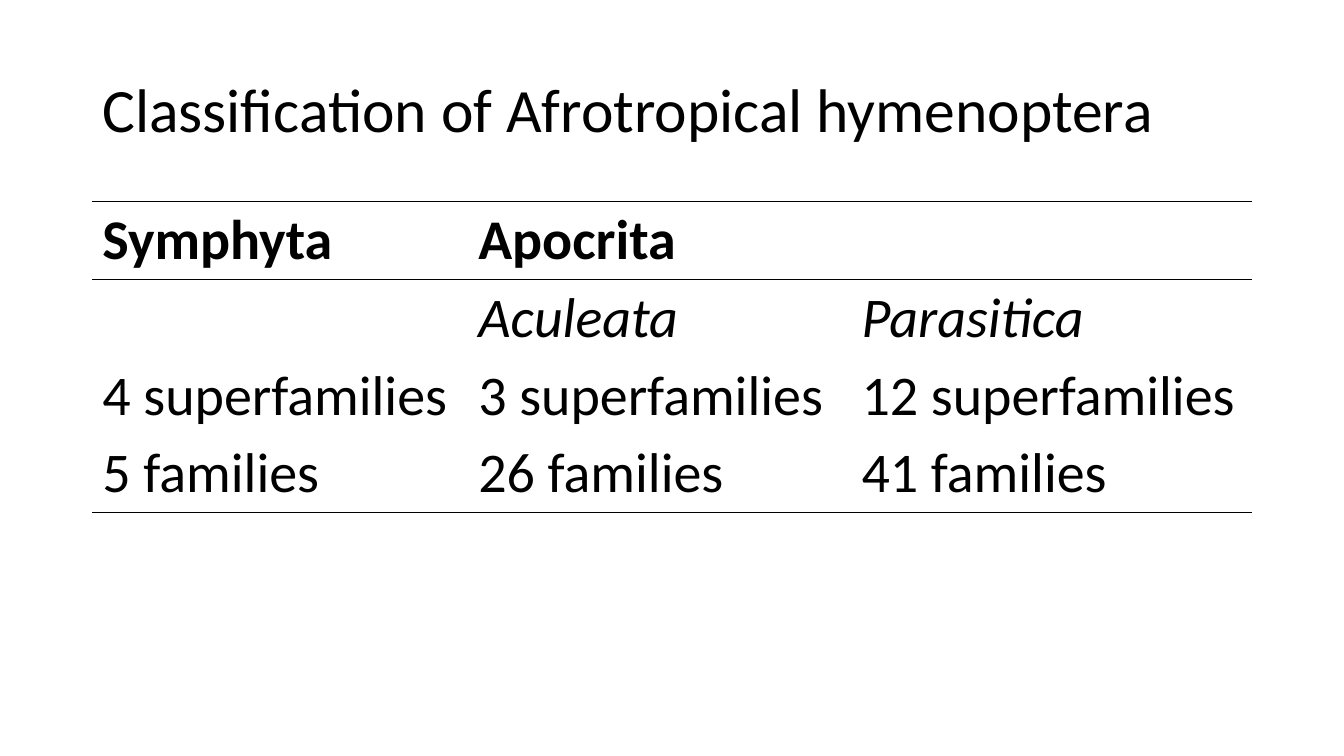
from lxml.etree import SubElement
from pptx import Presentation
from pptx.dml.color import RGBColor
from pptx.enum.text import MSO_ANCHOR
from pptx.oxml.ns import qn
from pptx.util import Pt

BLACK = RGBColor(0x00, 0x00, 0x00)
EMU_PER_PX = 9525
NO_GRID_STYLE = "{2D5ABB26-0587-4C30-8999-92F81FD0307C}"

COLUMN_WIDTHS = [358, 365, 381]
ROW_HEIGHT = 74
CLASSIFICATION = [
    ["Symphyta", "Apocrita", ""],
    ["", "Aculeata", "Parasitica"],
    ["4 superfamilies", "3 superfamilies", "12 superfamilies"],
    ["5 families", "26 families", "41 families"],
]


def px(length):
    return length * EMU_PER_PX


class SlideBuilder:
    font_name = "Calibri"
    color = BLACK

    def __init__(self, presentation):
        self.slide = presentation.slides.add_slide(presentation.slide_layouts[6])

    def set_text(self, paragraph, text, size, bold=False, italic=False):
        paragraph.text = text
        font = paragraph.font
        font.name = self.font_name
        font.size = Pt(size)
        font.bold = bold
        font.italic = italic
        font.color.rgb = self.color

    def title(self, text, left, top, width, height, size):
        shape = self.slide.shapes.add_textbox(px(left), px(top), px(width), px(height))
        frame = shape.text_frame
        frame.word_wrap = True
        frame.vertical_anchor = MSO_ANCHOR.MIDDLE
        paragraph = frame.paragraphs[0]
        paragraph.line_spacing = 0.9
        self.set_text(paragraph, text, size)

    def border(self, cell, side):
        properties = cell._tc.get_or_add_tcPr()
        line = SubElement(properties, qn(f"a:ln{side}"), w=str(Pt(1)))
        fill = SubElement(line, qn("a:solidFill"))
        SubElement(fill, qn("a:srgbClr"), val=str(self.color))

    def table(self, rows, left, top, column_widths, row_height, size):
        shape = self.slide.shapes.add_table(
            len(rows), len(column_widths), px(left), px(top),
            px(sum(column_widths)), px(row_height * len(rows)))
        table = shape.table
        table.first_row = False
        table.horz_banding = False
        table._tbl.tblPr.find(qn("a:tableStyleId")).text = NO_GRID_STYLE
        for column, width in zip(table.columns, column_widths):
            column.width = px(width)
        last_row = len(rows) - 1
        for row_index, texts in enumerate(rows):
            table.rows[row_index].height = px(row_height)
            for column_index, text in enumerate(texts):
                cell = table.cell(row_index, column_index)
                self.set_text(cell.text_frame.paragraphs[0], text, size,
                              bold=row_index == 0, italic=row_index == 1)
                if row_index == 0:
                    self.border(cell, "T")
                if row_index in (0, last_row):
                    self.border(cell, "B")
                cell.fill.background()
        return table


def main():
    presentation = Presentation()
    presentation.slide_width = px(1280)
    presentation.slide_height = px(720)
    builder = SlideBuilder(presentation)
    builder.title("Classification of Afrotropical hymenoptera", 88, 38, 1104, 139, 44)
    table = builder.table(CLASSIFICATION, 88, 192, COLUMN_WIDTHS, ROW_HEIGHT, 40)
    table.cell(0, 1).merge(table.cell(0, 2))
    presentation.save("out.pptx")


if __name__ == "__main__":
    main()
